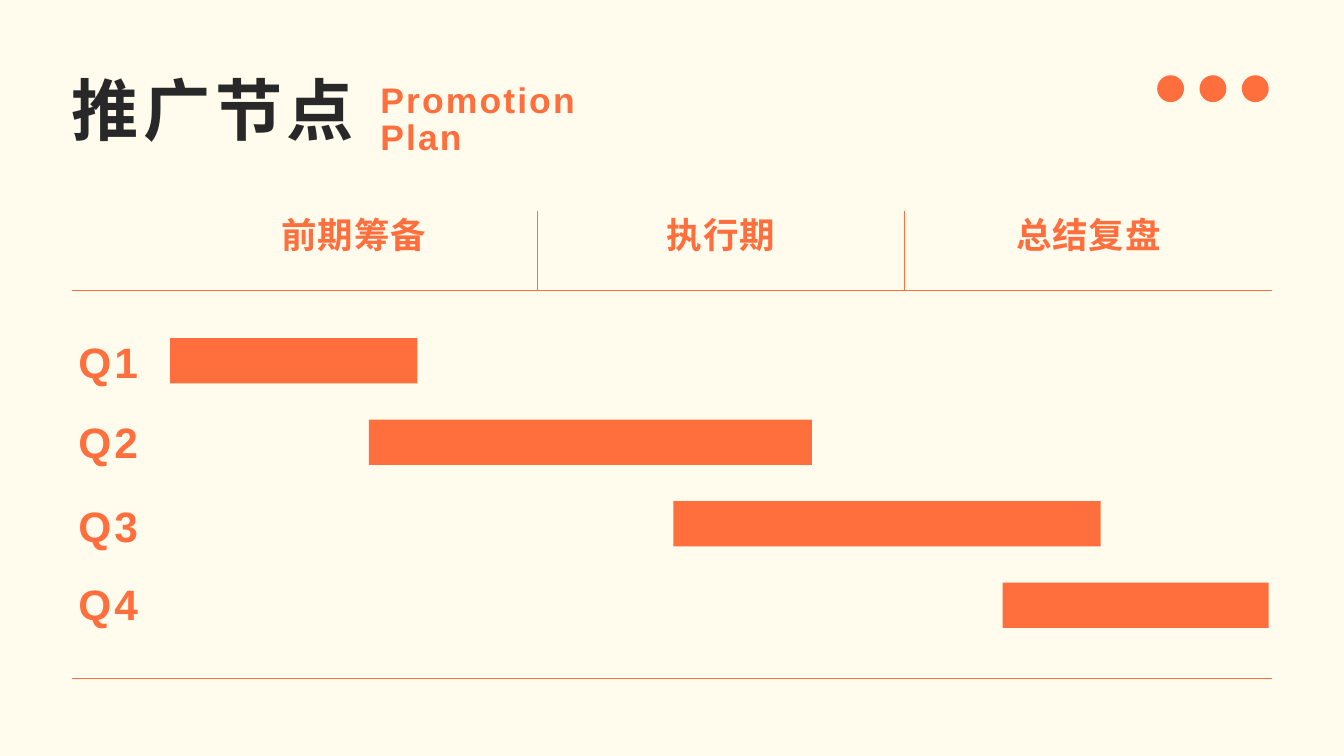
from dataclasses import dataclass

from lxml.etree import SubElement
from pptx import Presentation
from pptx.dml.color import RGBColor as RGB
from pptx.enum.shapes import MSO_CONNECTOR as LINE, MSO_SHAPE as SHAPE
from pptx.enum.text import MSO_AUTO_SIZE as FIT, PP_ALIGN as ALIGN
from pptx.oxml.ns import qn
from pptx.util import Inches, Pt

SLIDE_WIDTH, SLIDE_HEIGHT = Inches(20), Inches(11.25)
GRID_COLUMNS = 200
CELL = SLIDE_WIDTH / GRID_COLUMNS


@dataclass(frozen=True)
class Theme:
    paper = RGB.from_string("FFFBED")
    accent = RGB.from_string("FF6F3D")
    ink = RGB.from_string("282828")
    latin = "Arial"
    chinese = "Noto Sans CJK SC"
    rule = Pt(1.5)


THEME = Theme()
STYLES = {
    "title": dict(size=72, name=THEME.chinese, color=THEME.ink,
                  tracking=480, leading=85, align=ALIGN.LEFT),
    "subtitle": dict(size=38, name=THEME.latin, color=THEME.accent,
                     tracking=230, leading=39.9, align=ALIGN.LEFT),
    "phase": dict(size=38, name=THEME.chinese, color=THEME.accent,
                  tracking=90, leading=53.2, align=ALIGN.CENTER),
    "quarter": dict(size=45.5, name=THEME.latin, color=THEME.accent,
                    tracking=330, leading=55.2, align=ALIGN.CENTER),
}
PHASES = ["前期筹备", "执行期", "总结复盘"]
QUARTERS = [
    ("Q1", 18.6, 14.6, 36.8),
    ("Q2", 30.4, 44.2, 65.9),
    ("Q3", 42.9, 89.5, 63.6),
    ("Q4", 54.6, 138.5, 39.6),
]


@dataclass
class Box:
    column: float
    row: float
    columns: float
    rows: float

    def inner(self, column, row, columns, rows):
        return Box(self.column + column, self.row + row, columns, rows)

    def emu(self):
        return [round(cells * CELL)
                for cells in (self.column, self.row, self.columns, self.rows)]


def add_text(slide, box, lines, style):
    frame = slide.shapes.add_textbox(*box.emu()).text_frame
    layout = dict(margin_left=0, margin_top=0, margin_right=0, margin_bottom=0,
                  word_wrap=True, auto_size=FIT.SHAPE_TO_FIT_TEXT)
    for attribute, value in layout.items():
        setattr(frame, attribute, value)
    look = STYLES[style]
    frame.text = "\n".join(lines)
    for paragraph in frame.paragraphs:
        paragraph.alignment = look["align"]
        paragraph.line_spacing = Pt(look["leading"])
        for run in paragraph.runs:
            font_values = dict(size=Pt(look["size"]), name=look["name"], bold=True)
            for attribute, value in font_values.items():
                setattr(run.font, attribute, value)
            run.font.color.rgb = look["color"]
            properties = run._r.get_or_add_rPr()
            properties.set("spc", str(look["tracking"]))
            SubElement(properties, qn("a:ea")).set("typeface", look["name"])


def add_solid(slide, box, preset):
    solid = slide.shapes.add_shape(preset, *box.emu())
    solid.shadow.inherit = False
    solid.fill.solid()
    solid.fill.fore_color.rgb = THEME.accent
    solid.line.fill.background()


def add_rule(slide, box):
    left, top, width, height = box.emu()
    rule = slide.shapes.add_connector(
        LINE.STRAIGHT, left, top, left + width, top + height)
    rule.line.color.rgb = THEME.accent
    rule.line.width = THEME.rule
    SubElement(rule._element.spPr, qn("a:effectLst"))


def add_header(slide, box):
    add_text(slide, box.inner(0, 0, 51.7, 11.8), ["推广节点"], "title")
    add_text(slide, box.inner(45.9, 2, 42.9, 11.1), ["Promotion", "Plan"], "subtitle")
    dot, dot_step, dots = 4, 6.3, 3
    first_dot = box.columns - 0.5 - dot - dot_step * (dots - 1)
    for index in range(dots):
        add_solid(slide, box.inner(first_dot + index * dot_step, 0.8, dot, dot), SHAPE.OVAL)


def add_phases(slide, box):
    label_columns = 14.6
    phase_columns = (box.columns - label_columns) / len(PHASES)
    caption_columns = 25
    for index, phase in enumerate(PHASES):
        left = label_columns + index * phase_columns
        inset = (phase_columns - caption_columns) / 2
        add_text(slide, box.inner(left + inset, -0.7, caption_columns, 7.4), [phase], "phase")
        if index:
            add_rule(slide, box.inner(left, 0, 0, box.rows))
    add_rule(slide, box.inner(0, box.rows, box.columns, 0))


def add_quarters(slide, box):
    bar_top, bar_step, bar_rows = 7.1, 12.13, 6.75
    for index, (quarter, label_top, start, length) in enumerate(QUARTERS):
        add_text(slide, box.inner(0.5, label_top - 11.8, 9.8, 7.7), [quarter], "quarter")
        bar = box.inner(start, bar_top + index * bar_step, length, bar_rows)
        add_solid(slide, bar, SHAPE.RECTANGLE)
    add_rule(slide, box.inner(0, box.rows, box.columns, 0))


def main():
    presentation = Presentation()
    presentation.slide_width, presentation.slide_height = SLIDE_WIDTH, SLIDE_HEIGHT
    slide = presentation.slides.add_slide(presentation.slide_layouts[6])
    slide.background.fill.solid()
    slide.background.fill.fore_color.rgb = THEME.paper
    margin = 10.7
    content_columns = GRID_COLUMNS - 2 * margin
    add_header(slide, Box(margin, 10.4, content_columns, 13.1))
    add_phases(slide, Box(margin, 31.4, content_columns, 11.8))
    add_quarters(slide, Box(margin, 43.2, content_columns, 57.8))
    presentation.save("out.pptx")


if __name__ == "__main__":
    main()
